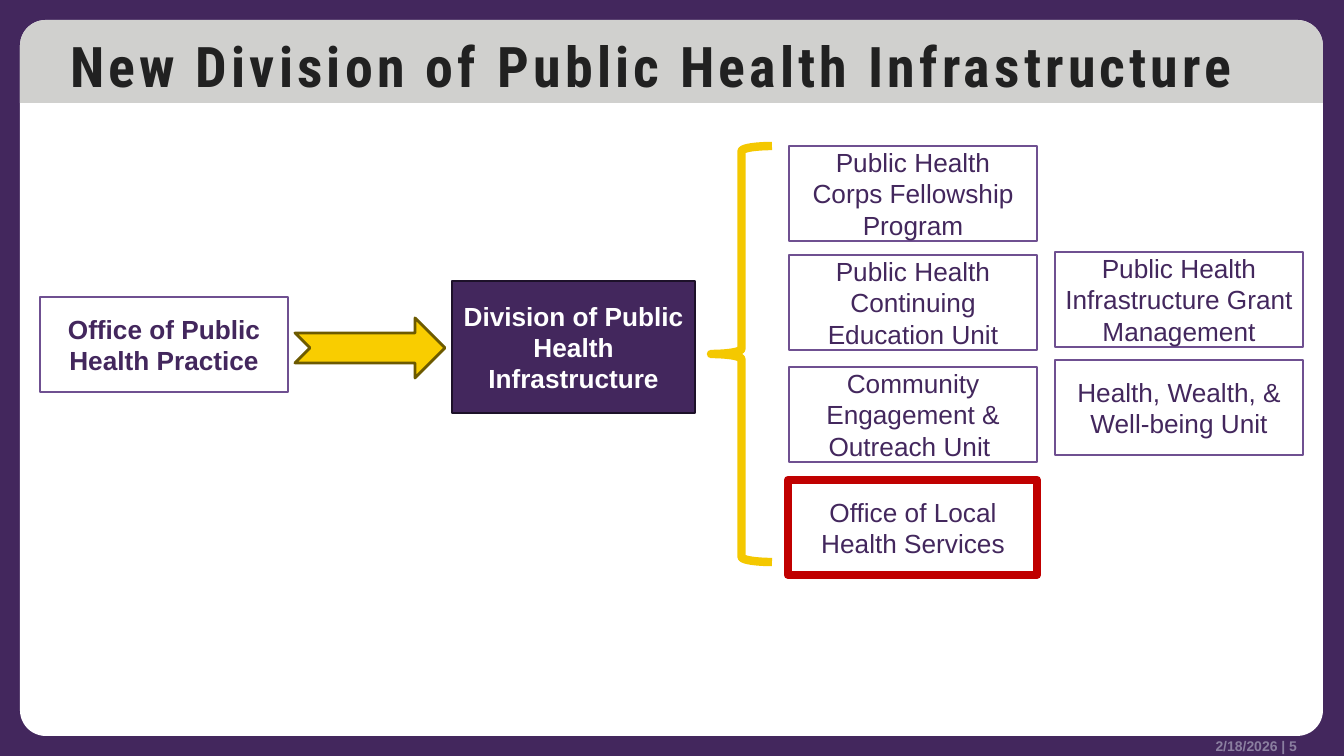
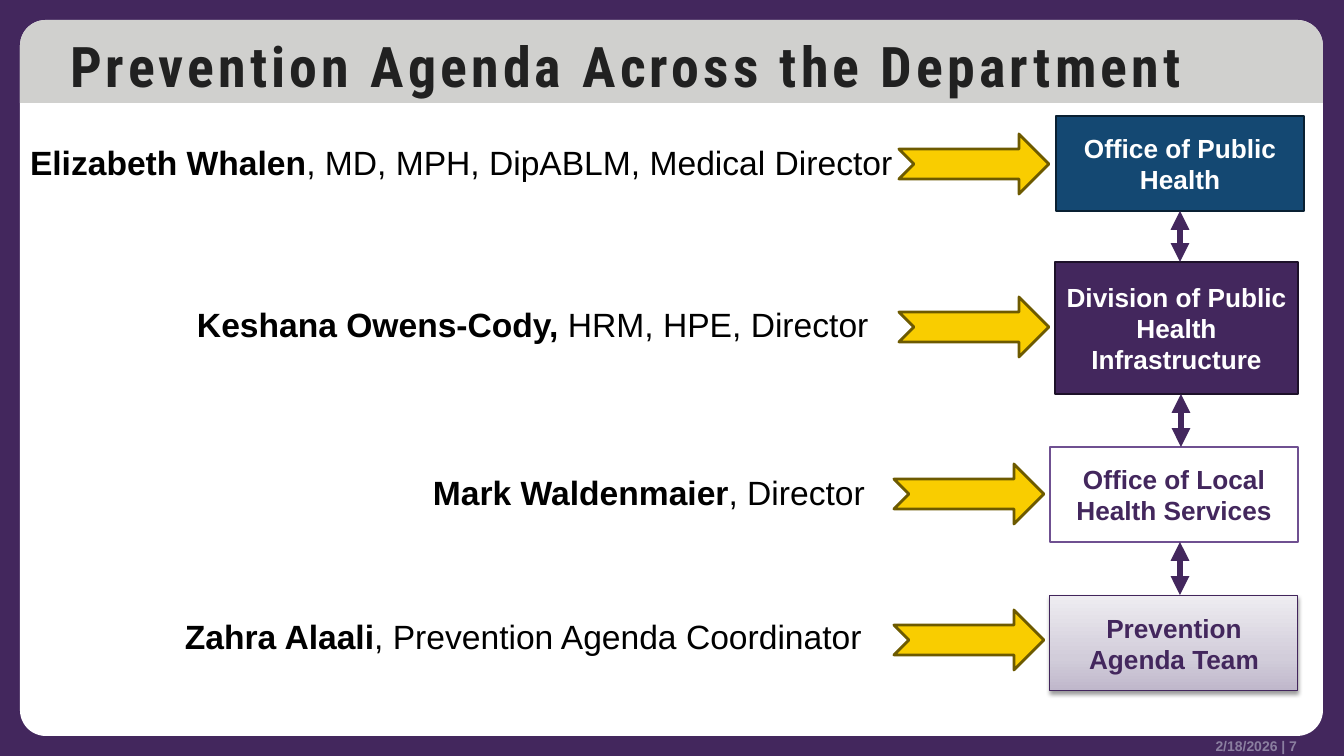
from pptx import Presentation
from pptx.dml.color import RGBColor
from pptx.enum.shapes import MSO_CONNECTOR, MSO_SHAPE
from pptx.enum.text import MSO_ANCHOR, MSO_AUTO_SIZE, PP_ALIGN
from pptx.oxml import parse_xml
from pptx.oxml.ns import nsdecls, qn
from pptx.oxml.xmlchemy import OxmlElement
from pptx.util import Pt

RECT = MSO_SHAPE.RECTANGLE
ROUND = MSO_SHAPE.ROUNDED_RECTANGLE
BAND = MSO_SHAPE.ROUND_2_SAME_RECTANGLE
ARROW = MSO_SHAPE.NOTCHED_RIGHT_ARROW
BRACE = MSO_SHAPE.LEFT_BRACE
LINE = MSO_CONNECTOR.STRAIGHT
LEFT, MID, RIGHT = PP_ALIGN.LEFT, PP_ALIGN.CENTER, PP_ALIGN.RIGHT
TOP, CENTER, BASE = MSO_ANCHOR.TOP, MSO_ANCHOR.MIDDLE, MSO_ANCHOR.BOTTOM
PX = 12192000 / 1344


class Theme:
    purple, violet, night = "43275D", "6F5091", "1D1129"
    white, black, ink, gray = "FFFFFF", "000000", "212121", "D0D0CE"
    gold, bronze, amber = "F9CD00", "6D5A00", "F4C800"
    blue, navy, red = "144872", "092032", "C00000"
    plum, mute = "42255C", "8B7FA0"
    fade = ((0, "BFB7CB"), (35, "D2CDDA"), (100, "EEECF1"))
    head, body = "Roboto Condensed", "Arial"
    title, name, label, foot = 40, 24, 18.7, 10


def write(shape, text, lead="", size=Theme.label, color=Theme.purple, bold=False,
          font=Theme.body, align=MID, anchor=CENTER, inset=(10, 5, 10, 5), space=0):
    frame = shape.text_frame
    frame.word_wrap = True
    frame.auto_size = MSO_AUTO_SIZE.NONE
    frame.vertical_anchor = anchor
    (frame.margin_left, frame.margin_top,
     frame.margin_right, frame.margin_bottom) = [round(n * PX) for n in inset]
    para = frame.paragraphs[0]
    para.alignment = align
    for words, heavy in ((lead, True), (text, bold)):
        if words:
            run = para.add_run()
            run.text = words
            run.font.name, run.font.size, run.font.bold = font, Pt(size), heavy
            run.font.color.rgb = RGBColor.from_string(color)
            if space:
                run.font.language_id = None
                run._r.get_or_add_rPr().set("spc", str(space * 100))


def block(slide, kind, place, fill=None, line=None, width=2):
    shape = slide.shapes.add_shape(kind, *[round(n * PX) for n in place])
    shape.shadow.inherit = False
    if fill:
        shape.fill.solid()
        shape.fill.fore_color.rgb = RGBColor.from_string(fill)
    else:
        shape.fill.background()
    if line:
        shape.line.color.rgb = RGBColor.from_string(line)
        shape.line.width = Pt(width)
    else:
        shape.line.fill.background()
    return shape


deck = Presentation()
deck.slide_width, deck.slide_height = round(1344 * PX), round(756 * PX)
back = deck.slide_master.background.fill
back.solid()
back.fore_color.rgb = RGBColor.from_string(Theme.purple)
layout = deck.slide_layouts[5]
for holder in list(layout.placeholders)[1:]:
    holder.element.getparent().remove(holder.element)

slides = []
for title, number in (("New Division of Public Health Infrastructure", 5),
                      ("Prevention Agenda Across the Department", 7)):
    slide = deck.slides.add_slide(layout)
    slides.append(slide)
    head = slide.shapes.title
    head.left, head.top, head.width, head.height = [
        round(n * PX) for n in (20, 26, 1303, 78)]
    write(head, title, size=Theme.title, color=Theme.ink, bold=True, font=Theme.head,
          align=LEFT, inset=(50, 5, 50, 5), space=3)
    foot = slide.shapes.add_textbox(*[round(n * PX) for n in (826, 737, 471, 17)])
    write(foot, f"2/18/2026 | {number}", size=Theme.foot, color=Theme.mute, bold=True,
          align=RIGHT, anchor=BASE, inset=(0, 0, 0, 0))

chart, people = slides
panel = block(chart, ROUND, (20, 20, 1303, 716), Theme.white)
panel.adjustments[0] = 0.036
band = block(chart, BAND, (20, 20, 1303, 83), Theme.gray)
band.adjustments[0], band.adjustments[1] = 0.31, 0
for spot, part in enumerate((panel, band), 2):
    layout.shapes.element.insert(spot, part.element)

office = block(chart, RECT, (40, 297, 248, 95), Theme.white, Theme.violet)
write(office, "Office of Public Health Practice", bold=True)
center = block(chart, RECT, (452, 281, 243, 132), Theme.purple, Theme.night)
write(center, "Division of Public Health Infrastructure", color=Theme.white, bold=True)
block(chart, ARROW, (295, 318, 150, 60), Theme.gold, Theme.bronze)

units = (
    (1055, 360, "Health, Wealth, & Well-being Unit"),
    (1055, 252, "Public Health Infrastructure Grant Management"),
    (789, 146, "Public Health Corps Fellowship Program"),
    (789, 255, "Public Health Continuing Education Unit"),
    (789, 367, "Community Engagement & Outreach Unit "),
    (789, 480, "Office of Local Health Services"),
)
for left, top, text in units:
    unit = block(chart, RECT, (left, top, 248, 95), Theme.white, Theme.violet)
    write(unit, text)
block(chart, BRACE, (711, 146, 61, 416), None, Theme.amber, 6)
block(chart, RECT, (788, 480, 249, 95), None, Theme.red, 6)

teams = (
    ((1056, 116, 248, 95), "Office of Public Health",
     Theme.blue, Theme.navy, Theme.white, 2, (899, 134)),
    ((1055, 262, 243, 132), "Division of Public Health Infrastructure",
     Theme.purple, Theme.night, Theme.white, 2, (899, 297)),
    ((1050, 447, 248, 95), "Office of Local Health Services",
     Theme.white, Theme.violet, Theme.purple, 2, (894, 464)),
    ((1050, 596, 248, 95), "Prevention Agenda Team",
     None, Theme.plum, Theme.purple, 0.75, (894, 610)),
)
staff = (
    (20, 137, "Elizabeth Whalen", ", MD, MPH, DipABLM, Medical Director"),
    (187, 299, "Keshana Owens-Cody,", " HRM, HPE, Director"),
    (423, 467, "Mark Waldenmaier", ", Director"),
    (175, 611, "Zahra Alaali", ", Prevention Agenda Coordinator"),
)
boxes = []
for (place, text, fill, line, color, width, point), (left, top, name, role) in zip(teams, staff):
    box = block(people, RECT, place, fill, line, width)
    write(box, text, color=color, bold=True)
    boxes.append(box)
    block(people, ARROW, (*point, 150, 60), Theme.gold, Theme.bronze)
    note = people.shapes.add_textbox(
        *[round(n * PX) for n in (left, top, point[0] - left, 50)])
    write(note, role, lead=name, size=Theme.name, color=Theme.black, align=LEFT,
          anchor=TOP, inset=(10, 5, 0, 5))

props = boxes[-1].element.spPr
stops = "".join(f'<a:gs pos="{spot * 1000}"><a:srgbClr val="{tone}"/></a:gs>'
                for spot, tone in Theme.fade)
props.replace(props.find(qn("a:noFill")), parse_xml(
    f'<a:gradFill {nsdecls("a")} rotWithShape="1"><a:gsLst>{stops}</a:gsLst>'
    '<a:lin ang="16200000" scaled="0"/></a:gradFill>'))
props.find(qn("a:effectLst")).append(parse_xml(
    f'<a:outerShdw {nsdecls("a")} blurRad="40000" dist="20000" dir="5400000" '
    f'rotWithShape="0"><a:srgbClr val="{Theme.black}"><a:alpha val="38000"/>'
    '</a:srgbClr></a:outerShdw>'))

links = []
for left, top, end in ((1180, 211, 262), (1181, 394, 447), (1180, 542, 595)):
    link = people.shapes.add_connector(
        LINE, *[round(n * PX) for n in (left, top, left, end)])
    link.line.color.rgb = RGBColor.from_string(Theme.purple)
    link.line.width = Pt(4.5)
    for tag in ("a:headEnd", "a:tailEnd"):
        tip = OxmlElement(tag)
        tip.set("type", "triangle")
        link.line._get_or_add_ln().append(tip)
    link.element.spPr.append(OxmlElement("a:effectLst"))
    links.append(link)
links[0].begin_connect(boxes[0], 2)

deck.save("out.pptx")
